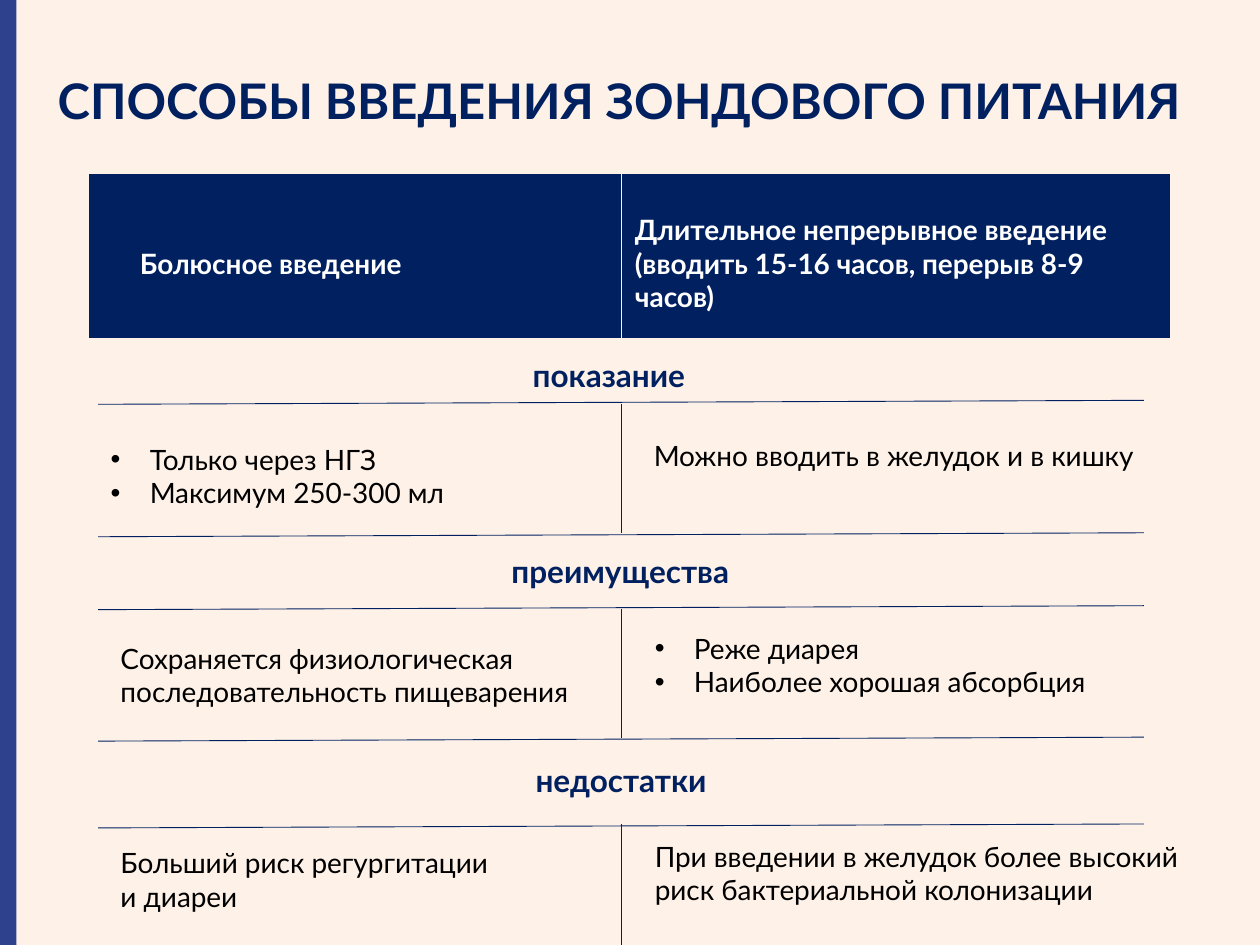
from dataclasses import dataclass
from typing import Optional

from lxml.etree import SubElement
from pptx import Presentation
from pptx.dml.color import RGBColor as RGB
from pptx.enum.shapes import MSO_CONNECTOR as Connector, MSO_SHAPE as Shape
from pptx.enum.text import MSO_ANCHOR as Anchor, PP_ALIGN as Align
from pptx.oxml.ns import qn
from pptx.util import Cm, Pt


@dataclass(frozen=True)
class Theme:
    font: str = "Lato"
    background: RGB = RGB(0xFE, 0xF1, 0xE8)
    navy: RGB = RGB(0x00, 0x20, 0x60)
    stripe: RGB = RGB(0x2E, 0x41, 0x8D)
    white: RGB = RGB(0xFF, 0xFF, 0xFF)
    black: RGB = RGB(0x00, 0x00, 0x00)
    title_size: int = 28
    heading_size: int = 18
    body_size: int = 16
    line_width: float = 0.5


@dataclass(frozen=True)
class Note:
    """Text box; place is left, top, width, height in centimetres."""
    place: tuple[float, float, float, float]
    lines: tuple[str, ...]
    bulleted: bool = False
    wrap: bool = True
    align: Align = Align.LEFT


@dataclass(frozen=True)
class Section:
    heading: Note
    bolus: Note
    continuous: Note
    top_rule: float
    divider: tuple[float, float]
    bottom_rule: Optional[float] = None


THEME = Theme()
NO_GRID_STYLE = "{2D5ABB26-0587-4C30-8999-92F81FD0307C}"
SLIDE_WIDTH, SLIDE_HEIGHT = 25.4, 19.05
RULE_LEFT, RULE_RIGHT, RULE_RISE = 1.98, 23.06, 0.08
DIVIDER_X = 12.52
BULLET_INDENT = 0.79

SECTIONS = (
    Section(
        heading=Note((10.49, 7.06, 4.09, 1.04), ("показание",)),
        bolus=Note((1.98, 8.79, 12.7, 1.62),
                   ("Только через НГЗ", "Максимум 250-300 мл"), bulleted=True),
        continuous=Note((12.93, 8.71, 10.26, 0.94),
                        ("Можно вводить в желудок и в кишку",), wrap=False),
        top_rule=8.15, divider=(8.15, 10.74), bottom_rule=10.82),
    Section(
        heading=Note((9.8, 11, 5.41, 1.02), ("преимущества",),
                     wrap=False, align=Align.CENTER),
        bolus=Note((2.18, 12.8, 12.7, 1.62),
                   ("Сохраняется физиологическая последовательность пищеварения",)),
        continuous=Note((12.95, 12.6, 12.7, 1.62),
                        ("Реже диарея", "Наиболее хорошая абсорбция"), bulleted=True),
        top_rule=12.29, divider=(12.27, 14.88), bottom_rule=14.94),
    Section(
        heading=Note((10.36, 15.21, 4.32, 1.02), ("недостатки",),
                     wrap=False, align=Align.CENTER),
        bolus=Note((2.18, 16.92, 8.1, 1.62),
                   ("Больший риск регургитации", "и диареи"), wrap=False),
        continuous=Note((12.95, 16.79, 12.7, 1.62),
                        ("При введении в желудок более высокий",
                         "риск бактериальной колонизации")),
        top_rule=16.69, divider=(16.61, SLIDE_HEIGHT)),
)


def write(paragraph, text: str, *, size: int, color: RGB, bold: bool = False,
          align: Align = Align.LEFT) -> None:
    paragraph.alignment = align
    run = paragraph.add_run()
    run.text = text
    font = run.font
    font.name, font.size, font.bold = THEME.font, Pt(size), bold
    font.color.rgb = color


def add_bullet(paragraph) -> None:
    properties = paragraph._p.get_or_add_pPr()
    properties.set("marL", str(Cm(BULLET_INDENT)))
    properties.set("indent", str(-Cm(BULLET_INDENT)))
    SubElement(properties, qn("a:buFont"), typeface="Arial")
    SubElement(properties, qn("a:buChar"), char="•")


def add_note(slide, note: Note, *, size: int, color: RGB, bold: bool = False) -> None:
    frame = slide.shapes.add_textbox(*map(Cm, note.place)).text_frame
    frame.word_wrap = note.wrap
    for index, line in enumerate(note.lines):
        paragraph = frame.add_paragraph() if index else frame.paragraphs[0]
        write(paragraph, line, size=size, color=color, bold=bold, align=note.align)
        if note.bulleted:
            add_bullet(paragraph)


def add_line(slide, start: tuple[float, float], end: tuple[float, float],
             color: RGB = THEME.navy) -> None:
    line = slide.shapes.add_connector(Connector.STRAIGHT, *map(Cm, start + end))
    line.line.color.rgb = color
    line.line.width = Pt(THEME.line_width)
    SubElement(line._element.spPr, qn("a:effectLst"))


def add_rule(slide, y: float) -> None:
    """Draw a full-width rule that rises slightly to the right."""
    add_line(slide, (RULE_LEFT, y), (RULE_RIGHT, y - RULE_RISE))


def format_title(slide) -> None:
    title = slide.shapes.title
    title.left, title.top, title.width, title.height = map(Cm, (0.91, 1.42, 24.74, 1.35))
    frame = title.text_frame
    frame.word_wrap = True
    frame.vertical_anchor = Anchor.MIDDLE
    paragraph = frame.paragraphs[0]
    paragraph.line_spacing = 0.9
    write(paragraph, "СПОСОБЫ ВВЕДЕНИЯ ЗОНДОВОГО ПИТАНИЯ",
          size=THEME.title_size, color=THEME.navy, bold=True)


def add_stripe(slide) -> None:
    stripe = slide.shapes.add_shape(Shape.RECTANGLE, 0, 0, Cm(0.33), Cm(SLIDE_HEIGHT))
    stripe.shadow.inherit = False
    stripe.fill.solid()
    stripe.fill.fore_color.rgb = THEME.stripe
    stripe.line.fill.background()


def add_method_table(slide) -> None:
    columns = (
        ("Болюсное введение", 10.82, 1.02),
        ("Длительное непрерывное введение (вводить 15-16 часов, перерыв 8-9 часов)",
         10.97, 0.18),
    )
    table = slide.shapes.add_table(
        1, len(columns), Cm(1.8), Cm(3.51), Cm(21.79), Cm(3.3)).table
    table.first_row = table.horz_banding = False
    table._tbl.tblPr.find(qn("a:tableStyleId")).text = NO_GRID_STYLE
    for index, (text, width, left_margin) in enumerate(columns):
        table.columns[index].width = Cm(width)
        cell = table.cell(0, index)
        cell.fill.solid()
        cell.fill.fore_color.rgb = THEME.navy
        cell.vertical_anchor = Anchor.MIDDLE
        cell.margin_left, cell.margin_right = Cm(left_margin), Cm(0.18)
        cell.margin_top, cell.margin_bottom = Cm(0.4), Cm(0.1)
        write(cell.text_frame.paragraphs[0], text,
              size=THEME.body_size, color=THEME.white, bold=True)


def add_section(slide, section: Section) -> None:
    add_note(slide, section.heading, size=THEME.heading_size, color=THEME.navy, bold=True)
    for note in (section.bolus, section.continuous):
        add_note(slide, note, size=THEME.body_size, color=THEME.black)
    add_rule(slide, section.top_rule)
    if section.bottom_rule is not None:
        add_rule(slide, section.bottom_rule)
    top, bottom = section.divider
    add_line(slide, (DIVIDER_X, top), (DIVIDER_X, bottom))


def main() -> None:
    presentation = Presentation()
    presentation.slide_width, presentation.slide_height = Cm(SLIDE_WIDTH), Cm(SLIDE_HEIGHT)
    slide = presentation.slides.add_slide(presentation.slide_layouts.get_by_name("Title Only"))
    slide.background.fill.solid()
    slide.background.fill.fore_color.rgb = THEME.background
    format_title(slide)
    add_stripe(slide)
    add_method_table(slide)
    for section in SECTIONS:
        add_section(slide, section)
    add_line(slide, (DIVIDER_X, 3.51), (DIVIDER_X, 7.11), THEME.background)
    presentation.save("out.pptx")


if __name__ == "__main__":
    main()
